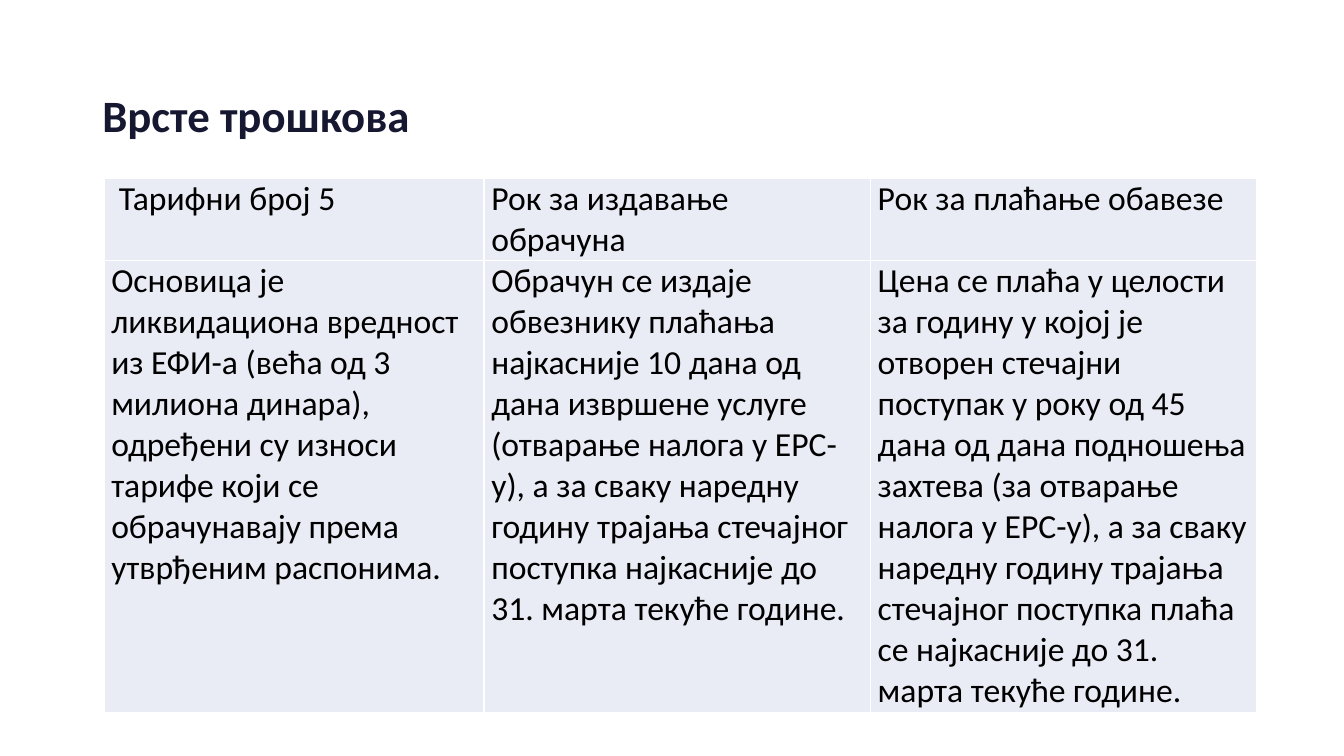
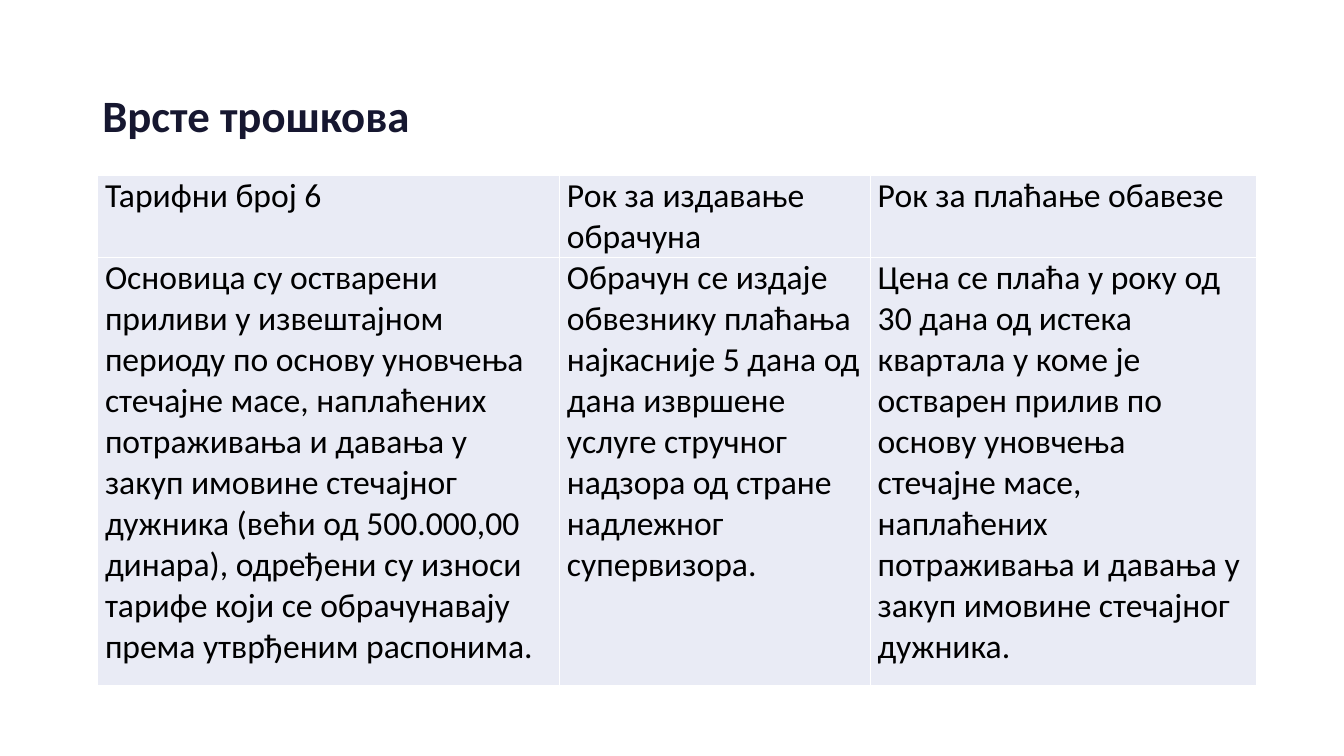
from lxml import etree
from pptx import Presentation
from pptx.dml.color import RGBColor
from pptx.enum.text import MSO_ANCHOR, PP_ALIGN
from pptx.oxml import parse_xml
from pptx.oxml.ns import nsdecls
from pptx.util import Pt

SCALE = 9525
NAVY = RGBColor(0x16, 0x17, 0x30)
BLACK = RGBColor(0x00, 0x00, 0x00)
WHITE = RGBColor(0xFF, 0xFF, 0xFF)
PALE = RGBColor(0xE9, 0xEB, 0xF5)
TOP = MSO_ANCHOR.TOP
BOTTOM = MSO_ANCHOR.BOTTOM
LEFT = PP_ALIGN.LEFT

TITLE = "Врсте трошкова"
ISSUE = "Рок за издавање обрачуна"
PAY = "Рок за плаћање обавезе"


def px(size):
    return size * SCALE


class Deck:
    font = "Calibri"
    inset = 7
    edge = Pt(1)

    def __init__(self):
        self.show = Presentation()
        self.show.slide_width = px(1280)
        self.show.slide_height = px(720)
        self.slide = None

    def page(self):
        self.slide = self.show.slides.add_slide(self.show.slide_layouts[6])
        self.title(TITLE)

    def text(self, para, words, size, color, bold=False):
        para.alignment = LEFT
        run = para.add_run()
        run.text = words
        run.font.name = self.font
        run.font.size = Pt(size)
        run.font.bold = bold
        run.font.color.rgb = color

    def title(self, words):
        box = self.slide.shapes.add_textbox(px(88), px(83), px(1104), px(57))
        frame = box.text_frame
        frame.word_wrap = True
        frame.vertical_anchor = BOTTOM
        para = frame.paragraphs[0]
        para.line_spacing = 0.9
        self.text(para, words, 32, NAVY, True)

    def border(self, cell):
        props = cell._tc.get_or_add_tcPr()
        for side in ("lnL", "lnR", "lnT", "lnB"):
            line = parse_xml(f'<a:{side} {nsdecls("a")} w="{self.edge}"/>')
            fill = etree.SubElement(line, line.tag.replace(side, "solidFill"))
            tint = etree.SubElement(fill, line.tag.replace(side, "srgbClr"))
            tint.set("val", str(WHITE))
            props.append(line)

    def cell(self, cell, words):
        self.border(cell)
        cell.fill.solid()
        cell.fill.fore_color.rgb = PALE
        cell.margin_left = cell.margin_right = px(self.inset)
        cell.margin_top = cell.margin_bottom = 0
        cell.vertical_anchor = TOP
        self.text(cell.text_frame.paragraphs[0], words, 24, BLACK)

    def table(self, left, top, cols, rows, data):
        frame = self.slide.shapes.add_table(
            len(rows), len(cols), px(left), px(top), px(sum(cols)), px(sum(rows)))
        table = frame.table
        table.first_row = False
        table.horz_banding = False
        for col, width in zip(table.columns, cols):
            col.width = px(width)
        for row, height, texts in zip(table.rows, rows, data):
            row.height = px(height)
            for cell, words in zip(row.cells, texts):
                self.cell(cell, words)


def main():
    deck = Deck()

    deck.page()
    deck.table(99, 170, (362, 368, 368), (78, 431), (
        (" Тарифни број 5", ISSUE, PAY),
        (
            "Основица је ликвидациона вредност из ЕФИ-а (већа од 3 милиона "
            "динара), одређени су износи тарифе који се обрачунавају према "
            "утврђеним распонима.",
            "Обрачун се издаје обвезнику плаћања најкасније 10 дана од дана "
            "извршене услуге (отварање налога у ЕРС-у), а за сваку наредну "
            "годину трајања стечајног поступка најкасније до 31. марта "
            "текуће године.",
            "Цена се плаћа у целости за годину у којој је отворен стечајни "
            "поступак у року од 45 дана од дана подношења захтева (за "
            "отварање налога у ЕРС-у), а за сваку наредну годину трајања "
            "стечајног поступка плаћа се најкасније до 31. марта текуће "
            "године.",
        ),
    ))

    deck.page()
    deck.table(93, 167, (440, 296, 368), (78, 408), (
        ("Тарифни број 6", ISSUE, PAY),
        (
            "Основица су остварени приливи у извештајном периоду по основу "
            "уновчења стечајне масе, наплаћених потраживања и давања у закуп "
            "имовине стечајног дужника (већи од 500.000,00 динара), одређени "
            "су износи тарифе који се обрачунавају према утврђеним "
            "распонима.",
            "Обрачун се издаје обвезнику плаћања најкасније 5 дана од дана "
            "извршене услуге стручног надзора од стране надлежног "
            "супервизора.",
            "Цена се плаћа у року од 30 дана од истека квартала у коме је "
            "остварен прилив по основу уновчења стечајне масе, наплаћених "
            "потраживања и давања у закуп имовине стечајног дужника.",
        ),
    ))

    deck.show.save("out.pptx")


if __name__ == "__main__":
    main()
